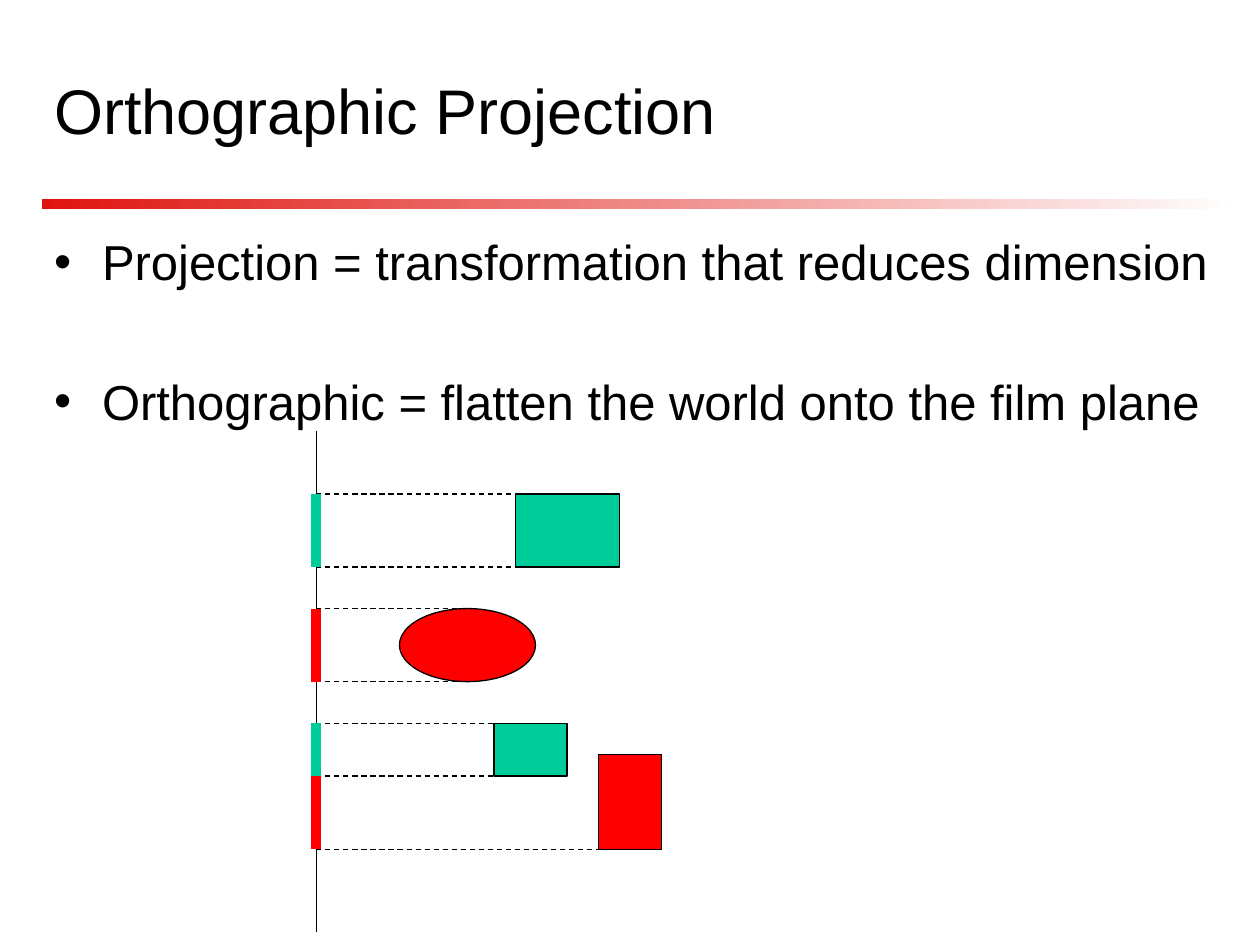
from dataclasses import dataclass

from lxml.etree import SubElement
from pptx import Presentation
from pptx.dml.color import RGBColor
from pptx.enum.dml import MSO_LINE
from pptx.enum.shapes import MSO_CONNECTOR, MSO_SHAPE
from pptx.enum.text import MSO_ANCHOR, MSO_AUTO_SIZE, PP_ALIGN
from pptx.oxml.ns import qn
from pptx.util import Inches, Pt

BLACK, WHITE, GREEN, RED = "000000", "FFFFFF", "00CC99", "FF0000"
FILM_X = 2.51


@dataclass
class WorldObject:
    """An object in the world and the part of it the film plane sees."""

    outline: MSO_SHAPE
    color: str
    left: float
    top: float
    width: float
    height: float
    ray_end: float
    seen_from: float

    @property
    def bottom(self):
        """Return the lower edge."""
        return self.top + self.height


WORLD = [
    WorldObject(MSO_SHAPE.RECTANGLE, GREEN, 4.09, 3.92, 0.83, 0.58, 4.09, 3.92),
    WorldObject(MSO_SHAPE.OVAL, RED, 3.17, 4.83, 1.08, 0.58, 3.67, 4.83),
    WorldObject(MSO_SHAPE.RECTANGLE, GREEN, 3.92, 5.74, 0.58, 0.42, 3.92, 5.74),
    WorldObject(MSO_SHAPE.RECTANGLE, RED, 4.75, 5.99, 0.5, 0.75, 4.75, 6.16),
]


def rgb(color):
    """Turn a hex string into a colour."""
    return RGBColor.from_string(color)


def write(paragraph, text, size=28, color=BLACK, before=0, bullet=None):
    """Put formatted text into a paragraph."""
    if bullet:
        properties = paragraph._p.get_or_add_pPr()
        properties.set("marL", str(Inches(0.38)))
        properties.set("indent", str(-Inches(0.38)))
        SubElement(properties, qn("a:buChar")).set("char", bullet)
    paragraph.alignment = PP_ALIGN.LEFT
    paragraph.space_before = Pt(before)
    run = paragraph.add_run()
    run.text = text
    run.font.name = "Arial"
    run.font.size = Pt(size)
    run.font.color.rgb = rgb(color)


def place(placeholder, left, top, width, height, anchor):
    """Move a placeholder and return its text frame."""
    placeholder.left, placeholder.top = Inches(left), Inches(top)
    placeholder.width, placeholder.height = Inches(width), Inches(height)
    frame = placeholder.text_frame
    frame.word_wrap = True
    frame.auto_size = MSO_AUTO_SIZE.NONE
    frame.vertical_anchor = anchor
    return frame


def add_outline(slide, outline, left, top, width, height):
    """Add a preset shape without a shadow."""
    shape = slide.shapes.add_shape(
        outline, Inches(left), Inches(top), Inches(width), Inches(height))
    shape.shadow.inherit = False
    return shape


def add_rule(slide):
    """Add the fading rule under the title."""
    rule = add_outline(slide, MSO_SHAPE.RECTANGLE, 0.33, 1.58, 9.5, 0.08)
    rule.line.fill.background()
    rule.fill.gradient()
    rule.fill.gradient_angle = 0
    for stop, position, color in zip(rule.fill.gradient_stops, (0, 1), ("DF140F", WHITE)):
        stop.position = position
        stop.color.rgb = rgb(color)


def add_line(slide, start, end, color=BLACK, width=0.75, dash=None):
    """Add a straight line between two points."""
    line = slide.shapes.add_connector(
        MSO_CONNECTOR.STRAIGHT, *map(Inches, (*start, *end)))
    line.line.color.rgb = rgb(color)
    line.line.width = Pt(width)
    if dash:
        line.line.dash_style = dash
    SubElement(line._element.spPr, qn("a:effectLst"))


def add_object(slide, item):
    """Add one object of the world."""
    body = add_outline(
        slide, item.outline, item.left, item.top, item.width, item.height)
    body.fill.solid()
    body.fill.fore_color.rgb = rgb(item.color)
    body.line.color.rgb = rgb(BLACK)
    body.line.width = Pt(0.75)


def add_rays(slide, item):
    """Add the dashed rays from an object's visible edges to the film."""
    edges = [item.top, item.bottom] if item.seen_from == item.top else [item.bottom]
    for y in edges:
        add_line(slide, (FILM_X, y), (item.ray_end, y), dash=MSO_LINE.DASH)


def add_image_strip(slide, item):
    """Add the flattened image of an object on the film plane."""
    add_line(slide, (FILM_X, item.seen_from), (FILM_X, item.bottom), item.color, 6)


def main():
    """Build the slide and save it."""
    deck = Presentation()
    deck.slide_width, deck.slide_height = Inches(10), Inches(7.5)
    slide = deck.slides.add_slide(deck.slide_layouts[1])
    title, body = slide.placeholders

    heading = place(title, 0.33, 0.33, 8.33, 1.08, MSO_ANCHOR.MIDDLE)
    write(heading.paragraphs[0], "Orthographic Projection", size=36)

    points = place(body, 0.33, 1.75, 9.42, 1.83, MSO_ANCHOR.TOP)
    points.margin_top = Inches(0.09)
    write(points.paragraphs[0], "Projection = transformation that reduces dimension",
          bullet="•")
    write(points.add_paragraph(), "Orthographic = flatten the world onto the film plane",
          before=46, bullet="•")

    add_rule(slide)
    add_line(slide, (FILM_X, 3.42), (FILM_X, 7.4))
    for add_part in (add_object, add_rays, add_image_strip):
        for item in WORLD:
            add_part(slide, item)
    deck.save("out.pptx")


if __name__ == "__main__":
    main()
